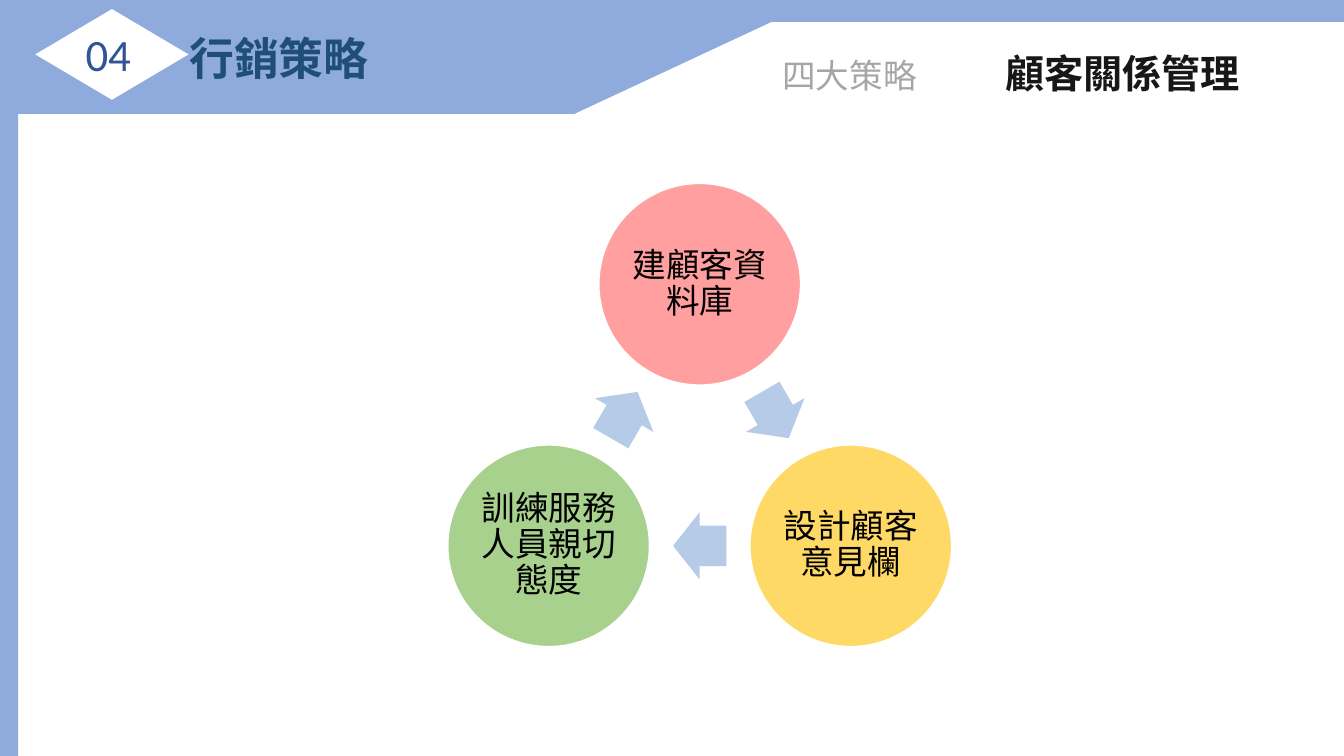
import math

from pptx import Presentation
from pptx.dml.color import RGBColor
from pptx.enum import shapes, text
from pptx.oxml.ns import qn
from pptx.util import Inches, Pt
from lxml import etree

FONT = "Calibri"
WHITE = RGBColor(0xFF, 0xFF, 0xFF)
BLACK = RGBColor(0x00, 0x00, 0x00)
BAND_BLUE = RGBColor(0x8F, 0xAA, 0xDC)
NUMBER_BLUE = RGBColor(0x2F, 0x55, 0x97)
TITLE_BLUE = RGBColor(0x1F, 0x4E, 0x79)
MUTED_GRAY = RGBColor(0xA6, 0xA6, 0xA6)
HEADING_BLACK = RGBColor(0x18, 0x17, 0x17)
ARROW_BLUE = RGBColor(0xB5, 0xCB, 0xE7)
PINK = RGBColor(0xFF, 0x9F, 0x9F)
YELLOW = RGBColor(0xFF, 0xD9, 0x66)
GREEN = RGBColor(0xA9, 0xD1, 0x8E)

SLIDE_WIDTH, SLIDE_HEIGHT = 13.33, 7.5
CYCLE_CENTER = (6.94, 4.55)
CYCLE_RADIUS = 1.73
CIRCLE_SIZE = 2
ARROW_SIZE = (0.53, 0.67)
STEPS = [
    ("建顧客資料庫", PINK),
    ("設計顧客意見欄", YELLOW),
    ("訓練服務人員親切態度", GREEN),
]


def paint(shape, color):
    shape.shadow.inherit = False
    shape.fill.solid()
    shape.fill.fore_color.rgb = color
    shape.line.fill.background()


def add_block(page, kind, left, top, width, height, color):
    block = page.shapes.add_shape(
        kind, Inches(left), Inches(top), Inches(width), Inches(height))
    paint(block, color)
    return block


def add_panel(page, points, color):
    corners = [(Inches(x), Inches(y)) for x, y in points]
    builder = page.shapes.build_freeform(*corners[0])
    builder.add_line_segments(corners[1:])
    paint(builder.convert_to_shape(), color)


def add_span(para, wording, size, color, bold=False):
    span = para.add_run()
    span.text = wording
    span.font.color.rgb = color
    for name, value in {"name": FONT, "size": Pt(size), "bold": bold}.items():
        setattr(span.font, name, value)


def add_label(page, left, top, width, height, spans, wrap=True):
    """Add a one-line text box and return its paragraph."""
    box = page.shapes.add_textbox(
        Inches(left), Inches(top), Inches(width), Inches(height))
    box.text_frame.word_wrap = wrap
    para = box.text_frame.paragraphs[0]
    for span in spans:
        add_span(para, *span)
    return para


def add_tab_stop(para, position):
    stops = etree.Element(qn("a:tabLst"))
    etree.SubElement(stops, qn("a:tab"), pos=str(Inches(position)), algn="l")
    para._p.get_or_add_pPr().append(stops)


def cycle_point(radius, degrees):
    """Return the point on the cycle, clockwise from the top."""
    angle = math.radians(degrees)
    return (CYCLE_CENTER[0] + radius * math.sin(angle),
            CYCLE_CENTER[1] - radius * math.cos(angle))


def add_step(page, center, wording, color):
    x, y = center
    circle = add_block(page, shapes.MSO_SHAPE.OVAL, x - CIRCLE_SIZE / 2,
                       y - CIRCLE_SIZE / 2, CIRCLE_SIZE, CIRCLE_SIZE, color)
    circle.line.color.rgb = WHITE
    circle.line.width = Pt(1)
    frame = circle.text_frame
    frame_format = {"word_wrap": True, "vertical_anchor": text.MSO_ANCHOR.MIDDLE}
    for side in ("left", "top", "right", "bottom"):
        frame_format[f"margin_{side}"] = Inches(0.03)
    for name, value in frame_format.items():
        setattr(frame, name, value)
    para = frame.paragraphs[0]
    para.alignment = text.PP_ALIGN.CENTER
    para.line_spacing = 0.9
    add_span(para, wording, 24, BLACK)


def add_cycle_arrow(page, center, rotation):
    width, height = ARROW_SIZE
    arrow = add_block(page, shapes.MSO_SHAPE.RIGHT_ARROW, center[0] - width / 2,
                      center[1] - height / 2, width, height, ARROW_BLUE)
    arrow.adjustments[0] = 0.6
    arrow.adjustments[1] = 0.5
    arrow.rotation = rotation


def add_header(page):
    kinds = shapes.MSO_SHAPE
    add_block(page, kinds.RECTANGLE, 0, 0, SLIDE_WIDTH, 1.13, BAND_BLUE)
    add_block(page, kinds.RECTANGLE, 0, 0, 0.18, SLIDE_HEIGHT, BAND_BLUE)
    add_block(page, kinds.FLOWCHART_DECISION, 0.35, 0.09, 1.52, 0.9, WHITE)
    add_panel(page, [(7.65, 0.22), (SLIDE_WIDTH, 0.22),
                     (SLIDE_WIDTH, 1.13), (5.7, 1.13)], WHITE)
    add_label(page, 0.75, 0.22, 1.03, 0.64, [("04", 32, NUMBER_BLUE)])
    add_label(page, 1.78, 0.26, 2, 0.64,
              [("行銷策略", 32, TITLE_BLUE, True)], wrap=False)
    sections = add_label(page, 7.66, 0.44, 5.5, 0.57,
                         [("四大策略\t", 24, MUTED_GRAY),
                          ("顧客關係管理", 28, HEADING_BLACK, True)])
    add_tab_stop(sections, 2.21)


def add_cycle(page):
    turn = 360 / len(STEPS)
    for index, (wording, color) in enumerate(STEPS):
        angle = index * turn
        add_step(page, cycle_point(CYCLE_RADIUS, angle), wording, color)
        halfway = angle + turn / 2
        midpoint = cycle_point(CYCLE_RADIUS * math.cos(math.radians(turn / 2)), halfway)
        add_cycle_arrow(page, midpoint, halfway)


def main():
    deck = Presentation()
    deck.slide_width = Inches(SLIDE_WIDTH)
    deck.slide_height = Inches(SLIDE_HEIGHT)
    page = deck.slides.add_slide(deck.slide_layouts[6])
    add_header(page)
    add_cycle(page)
    deck.save("out.pptx")


if __name__ == "__main__":
    main()
